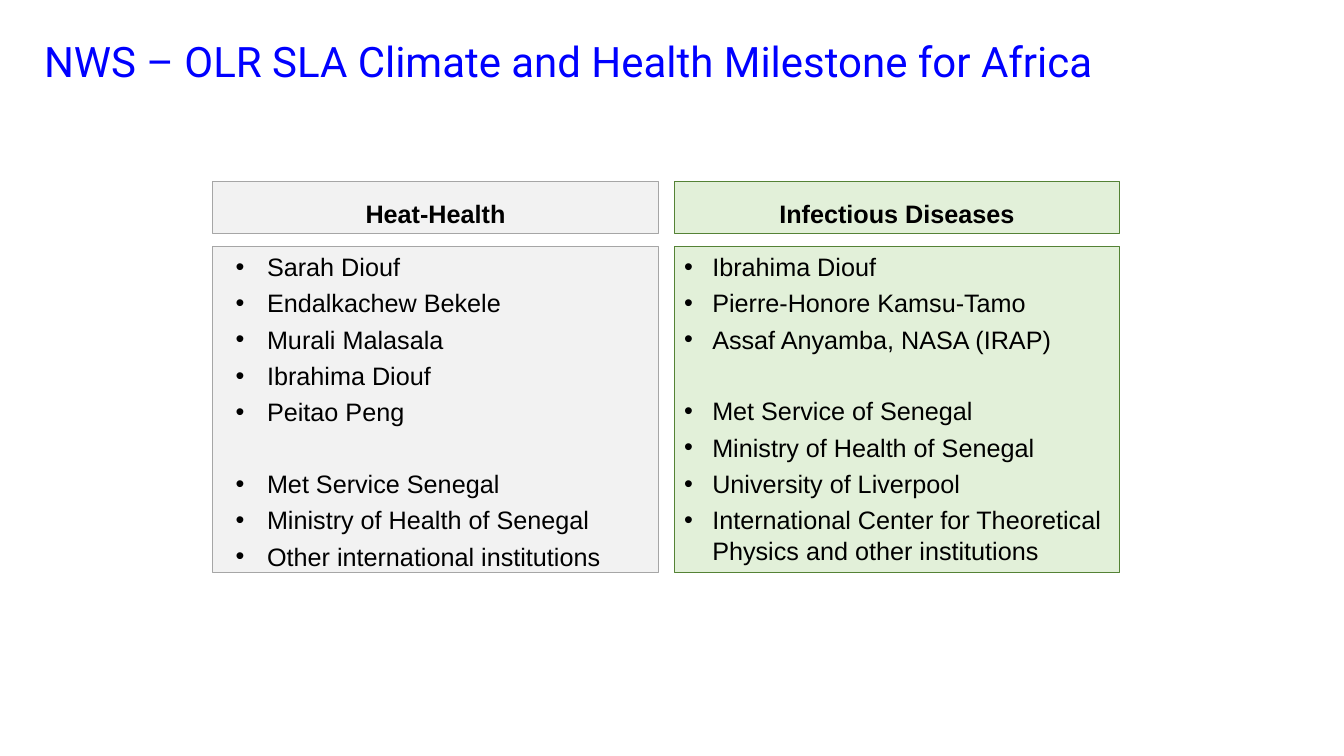
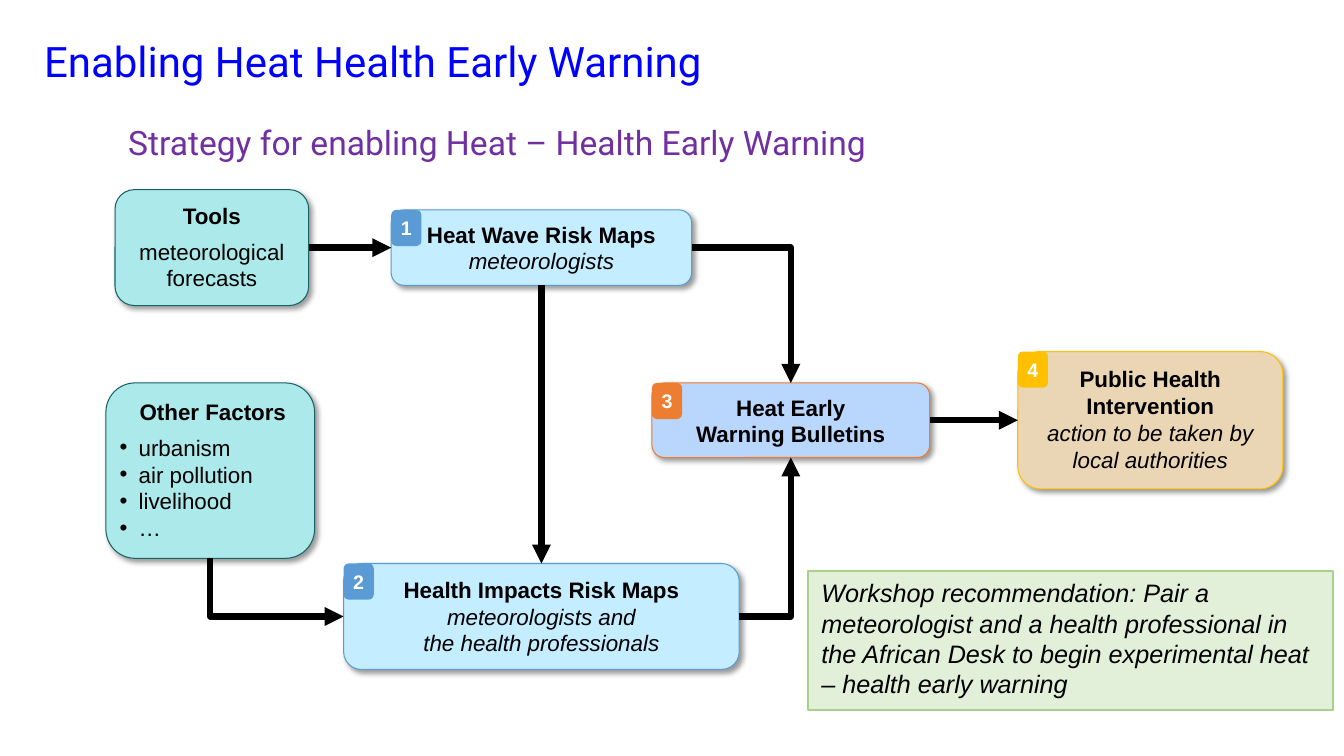
from dataclasses import dataclass

from lxml.etree import SubElement
from pptx import Presentation
from pptx.dml.color import RGBColor
from pptx.enum.shapes import MSO_CONNECTOR, MSO_SHAPE
from pptx.enum.text import MSO_ANCHOR, MSO_AUTO_SIZE, PP_ALIGN
from pptx.oxml.ns import qn
from pptx.util import Cm, Pt

COMPARISON, TITLE_ONLY = 4, 5
TOP, LEFT, BOTTOM, RIGHT = range(4)


@dataclass(frozen=True)
class Theme:
    heading_font: str = "Roboto"
    body_font: str = "Arial"
    title_size: float = 30
    subtitle_size: float = 24
    body_size: float = 18
    step_size: float = 16
    badge_size: float = 14
    title: str = "0000FF"
    subtitle: str = "7030A0"
    ink: str = "000000"
    white: str = "FFFFFF"
    grey: str = "F2F2F2"
    grey_edge: str = "A6A6A6"
    green: str = "E2F0D9"
    green_edge: str = "548235"
    note_edge: str = "A9D18E"
    teal: str = "ABE9EA"
    teal_edge: str = "1A6364"
    sky: str = "C4EDFF"
    blue: str = "5B9BD5"
    periwinkle: str = "B9D6FC"
    orange: str = "ED7D31"
    sand: str = "EAD6B5"
    gold: str = "FFC000"
    thin: float = 0.75
    medium: float = 1.5
    arrow: float = 4.5


@dataclass(frozen=True)
class Line:
    text: str
    bold: bool = False
    italic: bool = False
    before: float = 0
    bullet: tuple = ()
    align: PP_ALIGN = PP_ALIGN.CENTER


class Deck:
    def __init__(self, theme):
        self.theme = theme
        self.deck = Presentation()
        self.deck.slide_width, self.deck.slide_height = Cm(33.87), Cm(19.05)
        self.page = None

    def add_page(self, layout, title):
        theme = self.theme
        self.page = self.deck.slides.add_slide(self.deck.slide_layouts[layout])
        box = self.page.shapes.title
        self.place(box, (0.86, 0.64, 31.29, 1.68))
        self.set_text(box, [Line(title, align=PP_ALIGN.LEFT)], theme.title_size, theme.title,
                      theme.heading_font, margins=(0.25, 0.25, 0.25, 0.25))

    def place(self, box, area):
        box.left, box.top, box.width, box.height = (Cm(length) for length in area)

    def paint(self, box, fill, edge=None, width=None):
        box.shadow.inherit = False
        box.fill.solid()
        box.fill.fore_color.rgb = RGBColor.from_string(fill)
        if edge:
            box.line.color.rgb = RGBColor.from_string(edge)
            box.line.width = Pt(width or self.theme.thin)
        else:
            box.line.fill.background()

    def set_text(self, box, lines, size, color=None, font=None,
                 margins=(0.25, 0.13, 0.25, 0.13), anchor=MSO_ANCHOR.TOP):
        frame = box.text_frame
        frame.text = "\n".join(line.text for line in lines)
        frame.word_wrap = True
        frame.auto_size = MSO_AUTO_SIZE.NONE
        frame.vertical_anchor = anchor
        (frame.margin_left, frame.margin_top,
         frame.margin_right, frame.margin_bottom) = (Cm(margin) for margin in margins)
        for para, line in zip(frame.paragraphs, lines):
            para.alignment = line.align
            para.space_before = Pt(line.before)
            self.set_bullet(para, line.bullet)
            for span in para.runs:
                span.font.name = font or self.theme.body_font
                span.font.size = Pt(size)
                span.font.bold = line.bold
                span.font.italic = line.italic
                span.font.color.rgb = RGBColor.from_string(color or self.theme.ink)

    def set_bullet(self, para, bullet):
        margin, hang = bullet or (0, 0)
        properties = para._p.get_or_add_pPr()
        properties.set("marL", str(Cm(margin)))
        properties.set("indent", str(-Cm(hang)))
        if bullet:
            SubElement(properties, qn("a:buFont"), typeface=self.theme.body_font)
            SubElement(properties, qn("a:buChar"), char="•")
        else:
            SubElement(properties, qn("a:buNone"))

    def column(self, index, left, heading, groups, bullet, fill, edge):
        size = self.theme.body_size
        gap, group_gap = 4.4, 29.5
        head, body = (self.page.placeholders[index + offset] for offset in range(2))
        self.place(head, (left, 4.57, 11.23, 1.32))
        self.place(body, (left, 6.2, 11.23, 8.23))
        for box in (head, body):
            self.paint(box, fill, edge)
        self.set_text(head, [Line(heading, bold=True)], size, anchor=MSO_ANCHOR.BOTTOM)
        lines = [Line(name, before=gap if position else group_gap, bullet=bullet,
                      align=PP_ALIGN.LEFT)
                 for group in groups for position, name in enumerate(group)]
        lines[0] = Line(lines[0].text, bullet=bullet, align=PP_ALIGN.LEFT)
        self.set_text(body, lines, size)

    def subtitle(self, area, text):
        theme = self.theme
        box = self.page.shapes.add_textbox(*(Cm(length) for length in area))
        self.set_text(box, [Line(text, align=PP_ALIGN.LEFT)], theme.subtitle_size,
                      theme.subtitle, theme.heading_font, (0.33, 0.33, 0.33, 0.33),
                      MSO_ANCHOR.MIDDLE)

    def shape(self, kind, area, fill, edge=None, width=None):
        box = self.page.shapes.add_shape(kind, *(Cm(length) for length in area))
        self.paint(box, fill, edge, width)
        return box

    def step(self, area, lines, fill, edge, badge=None,
             kind=MSO_SHAPE.FLOWCHART_ALTERNATE_PROCESS, margins=(0.33, 0.18, 0.33, 0.18)):
        box = self.shape(kind, area, fill, edge)
        self.cast_shadow(box)
        self.set_text(box, lines, self.theme.step_size, margins=margins)
        if badge:
            tag = self.shape(MSO_SHAPE.FLOWCHART_ALTERNATE_PROCESS,
                             (*area[:2], 0.76, 0.91), edge)
            self.set_text(tag, [Line(badge, bold=True)], self.theme.badge_size,
                          self.theme.white, margins=(0, 0, 0, 0), anchor=MSO_ANCHOR.MIDDLE)
        return box

    def cast_shadow(self, box):
        effects = box._element.spPr.find(qn("a:effectLst"))
        shadow = SubElement(effects, qn("a:outerShdw"), blurRad=str(Pt(4)), dist=str(Pt(3)),
                            dir="2700000", algn="tl", rotWithShape="0")
        color = SubElement(shadow, qn("a:srgbClr"), val=self.theme.ink)
        SubElement(color, qn("a:alpha"), val="40000")

    def note(self, area, text):
        theme = self.theme
        box = self.shape(MSO_SHAPE.RECTANGLE, area, theme.green, theme.note_edge, theme.medium)
        self.set_text(box, [Line(text, italic=True, align=PP_ALIGN.LEFT)], theme.body_size,
                      margins=(0.33, 0.18, 0.33, 0.18))

    def arrow(self, start, start_side, end, end_side, bent=False, tip="tailEnd"):
        kind = MSO_CONNECTOR.ELBOW if bent else MSO_CONNECTOR.STRAIGHT
        link = self.page.shapes.add_connector(kind, 0, 0, 0, 0)
        link.begin_connect(start, start_side)
        link.end_connect(end, end_side)
        link.line.color.rgb = RGBColor.from_string(self.theme.ink)
        link.line.width = Pt(self.theme.arrow)
        properties = link._element.spPr
        if bent:
            properties.find(qn("a:prstGeom")).set("prst", "bentConnector2")
        SubElement(properties.find(qn("a:ln")), qn(f"a:{tip}"), type="triangle")
        SubElement(properties, qn("a:effectLst"))


def build_team(deck):
    theme = deck.theme
    deck.add_page(COMPARISON, "NWS – OLR SLA Climate and Health Milestone for Africa")
    deck.column(1, 5.36, "Heat-Health", [
        ["Sarah Diouf", "Endalkachew Bekele", "Murali Malasala", "Ibrahima Diouf",
         "Peitao Peng"],
        ["Met Service Senegal", "Ministry of Health of Senegal",
         "Other international institutions"],
    ], (1.12, 0.79), theme.grey, theme.grey_edge)
    deck.column(3, 16.99, "Infectious Diseases", [
        ["Ibrahima Diouf", "Pierre-Honore Kamsu-Tamo", "Assaf Anyamba, NASA (IRAP)"],
        ["Met Service of Senegal", "Ministry of Health of Senegal",
         "University of Liverpool",
         "International Center for Theoretical Physics and other institutions"],
    ], (0.71, 0.71), theme.green, theme.green_edge)


def build_strategy(deck):
    theme = deck.theme
    deck.add_page(TITLE_ONLY, "Enabling Heat Health Early Warning")
    deck.subtitle((2.9, 2.59, 20.35, 1.96), "Strategy for enabling Heat – Health Early Warning")

    tools = deck.step((2.9, 4.78, 4.88, 2.92), [
        Line("Tools", bold=True), Line("meteorological forecasts", before=6),
    ], theme.teal, theme.teal_edge)
    factors = deck.step((2.67, 9.65, 5.26, 4.42), [
        Line("Other Factors", bold=True),
        *(Line(name, before=0 if position else 6, bullet=(0.48, 0.48), align=PP_ALIGN.LEFT)
          for position, name in enumerate(["urbanism", "air pollution", "livelihood", "…"])),
    ], theme.teal, theme.teal_edge, kind=MSO_SHAPE.ROUNDED_RECTANGLE,
        margins=(0.13, 0.18, 0, 0.18))
    heat_maps = deck.step((9.86, 5.29, 7.57, 1.9), [
        Line("Heat Wave Risk Maps", bold=True), Line("meteorologists", italic=True),
    ], theme.sky, theme.blue, "1")
    health_maps = deck.step((8.66, 14.2, 9.97, 2.67), [
        Line("Health Impacts Risk Maps", bold=True),
        Line("meteorologists and", italic=True),
        Line("the health professionals", italic=True),
    ], theme.sky, theme.blue, "2")
    bulletins = deck.step((16.43, 9.65, 7, 1.88), [
        Line("Heat Early", bold=True), Line("Warning Bulletins", bold=True),
    ], theme.periwinkle, theme.orange, "3")
    intervention = deck.step((25.65, 8.86, 6.68, 3.46), [
        Line("Public Health Intervention", bold=True),
        Line("action to be taken by local authorities", italic=True),
    ], theme.sand, theme.gold, "4")

    deck.arrow(tools, RIGHT, heat_maps, LEFT)
    deck.arrow(heat_maps, BOTTOM, health_maps, TOP)
    deck.arrow(bulletins, RIGHT, intervention, LEFT)
    deck.arrow(heat_maps, RIGHT, bulletins, TOP, bent=True)
    deck.arrow(health_maps, RIGHT, bulletins, BOTTOM, bent=True)
    deck.arrow(health_maps, LEFT, factors, BOTTOM, bent=True, tip="headEnd")

    deck.note((20.37, 14.38, 13.23, 3.51),
              "Workshop recommendation: Pair a meteorologist and a health professional in "
              "the African Desk to begin experimental heat – health early warning")


def main():
    deck = Deck(Theme())
    build_team(deck)
    build_strategy(deck)
    deck.deck.save("out.pptx")


if __name__ == "__main__":
    main()
